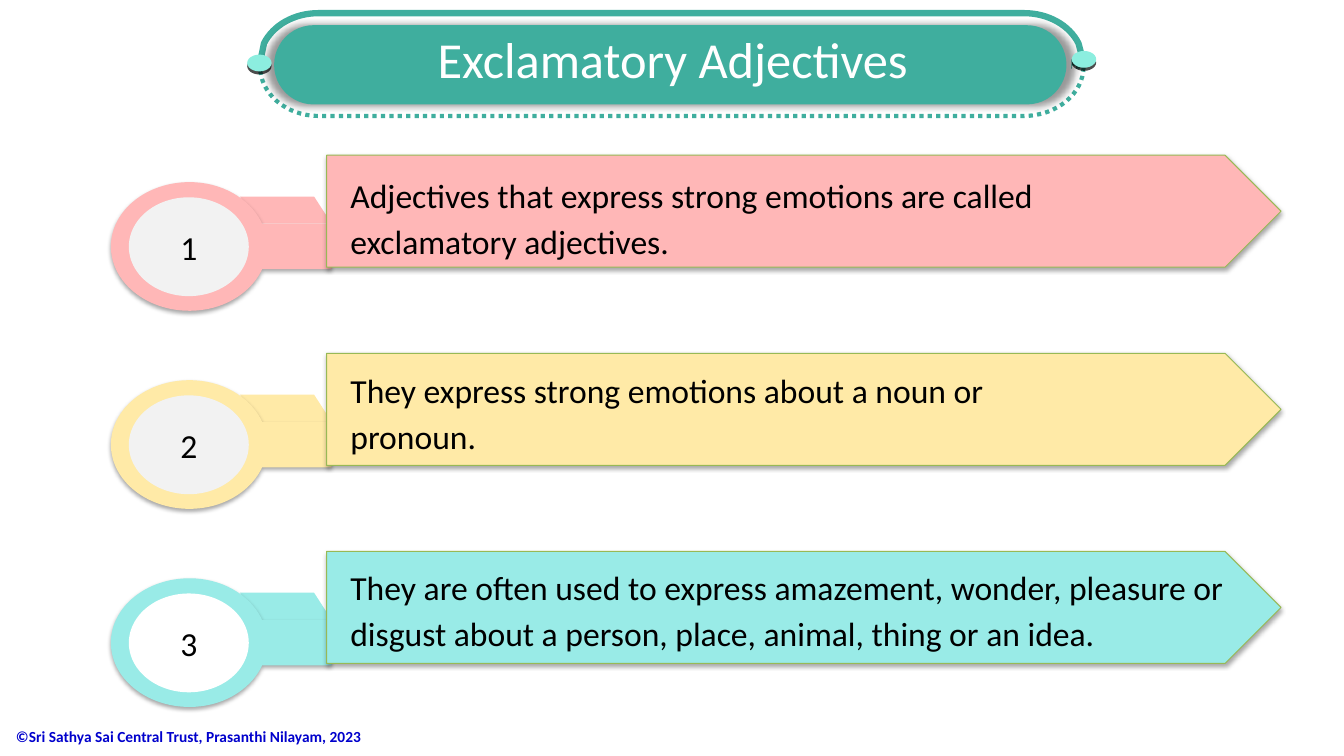
from pptx import Presentation
from pptx.dml.color import RGBColor
from pptx.enum.dml import MSO_LINE_DASH_STYLE as Dash
from pptx.enum.shapes import MSO_SHAPE as Kind
from pptx.enum.text import MSO_ANCHOR as Anchor, PP_ALIGN as Align
from pptx.oxml import parse_xml
from pptx.oxml.ns import nsdecls, qn
from pptx.util import Pt

WHITE = RGBColor(0xFF, 0xFF, 0xFF)
BLACK = RGBColor(0, 0, 0)
GREY = RGBColor(0xF2, 0xF2, 0xF2)
TEAL = RGBColor(0x3F, 0xAE, 0x9E)
MINT = RGBColor(0x8C, 0xEE, 0xDF)
PINK = RGBColor(0xFF, 0xB7, 0xB7)
SAND = RGBColor(0xFF, 0xEA, 0xA7)
AQUA = RGBColor(0x99, 0xEB, 0xE7)
OLIVE = RGBColor(0x98, 0xB9, 0x55)
BLUE = RGBColor(0, 0, 0xCC)

# Shadows: opacity %, blur, distance, angle, scale %
SOFT = (35, 3.1, 1.8, 90, 100)
GLOW = (40, 5, 0, 0, 102)
HARD = (70, 0, 2.2, 90, 100)

# Outlines: a start point, then lines (one point) and curves (three points)
UPPER = [
    [(227.5, 9.4)], [(731.5, 9.4)],
    [(748.8, 9.4), (763.9, 18), (770.4, 31)],
    [(774, 44.6)], [(185.8, 44.6)], [(188.6, 31)],
    [(195.1, 18), (210.2, 9.4), (227.5, 9.4)],
]
LOWER = [
    [(185.8, 47.5)], [(774, 47.5)],
    [(774, 67), (754.6, 82.8), (731.5, 82.8)],
    [(227.5, 82.8)],
    [(204.5, 82.8), (185.8, 67), (185.8, 47.5)],
]
RING = [
    [(135.4, 19.2)],
    [(158.4, 19.2), (177.8, 30.7), (186.5, 47.3)],
    [(187.2, 49)], [(236.9, 49)], [(236.9, 81.4)], [(187.2, 81.4)],
    [(186.5, 83)],
    [(177.8, 99.6), (158.4, 111.1), (135.4, 111.1)],
    [(104.4, 111.1), (79.2, 90.6), (79.2, 65.2)],
    [(79.2, 39.8), (104.4, 19.2), (135.4, 19.2)],
]

TOP, STEP = 110.9, 141.5
# Colour, disc colour, text, text offset and width
ROWS = [
    (PINK, GREY, "Adjectives that express strong emotions are called "
     "exclamatory adjectives.", 6.5, 610.6),
    (SAND, GREY, "They express strong emotions about a noun or pronoun.",
     4.3, 533.5),
    (AQUA, WHITE, "They are often used to express amazement, wonder, "
     "pleasure or disgust about a person, place, animal, thing or an idea.",
     3.5, 652.3),
]


def paint(shape, fill, line=None, width=0.75, dash=None, shade=None):
    shape.fill.solid()
    shape.fill.fore_color.rgb = fill
    if line is None:
        shape.line.fill.background()
    else:
        shape.line.color.rgb = line
        shape.line.width = Pt(width)
        shape.line.dash_style = dash
    shape.shadow.inherit = False
    if shade:
        alpha, blur, dist, angle, scale = shade
        effects = shape._element.spPr.find(qn("a:effectLst"))
        effects.append(parse_xml(
            f'<a:outerShdw {nsdecls("a")} blurRad="{Pt(blur)}" '
            f'dist="{Pt(dist)}" dir="{angle * 60000}" '
            f'sx="{scale * 1000}" sy="{scale * 1000}" algn="ctr" '
            'rotWithShape="0"><a:srgbClr val="000000">'
            f'<a:alpha val="{alpha * 1000}"/></a:srgbClr></a:outerShdw>'))
    return shape


def preset(slide, kind, box, fill, adj=None, **style):
    shape = slide.shapes.add_shape(kind, *map(Pt, box))
    if adj is not None:
        shape.adjustments[0] = adj
    return paint(shape, fill, **style)


def outline(slide, parts, fill, top=0, **style):
    first, *rest = [(Pt(x), Pt(top + y)) for part in parts for x, y in part]
    pen = slide.shapes.build_freeform(*first)
    pen.add_line_segments(rest, close=True)
    shape = pen.convert_to_shape()
    # Join each group of three points into one curve
    steps = iter(list(shape._element.iter(qn("a:lnTo"))))
    for part in parts[1:]:
        head, *tail = [next(steps) for _ in part]
        if tail:
            head.tag = qn("a:cubicBezTo")
        for step in tail:
            head.append(step[0])
            step.getparent().remove(step)
    return paint(shape, fill, **style)


def write(shape, text, size=24, color=BLACK, bold=False, align=Align.LEFT,
          anchor=Anchor.TOP, lead=None):
    frame = shape.text_frame
    frame.word_wrap = True
    frame.vertical_anchor = anchor
    frame.text = text
    para = frame.paragraphs[0]
    para.alignment = align
    para.line_spacing = lead
    font = para.runs[0].font
    font.name, font.size, font.bold = "Calibri", Pt(size), bold
    font.color.rgb = color


def label(slide, box, text, **style):
    write(slide.shapes.add_textbox(*map(Pt, box)), text, **style)


def banner(slide):
    outline(slide, UPPER, WHITE, line=TEAL, width=4.5)
    outline(slide, LOWER, WHITE, line=TEAL, width=3, dash=Dash.ROUND_DOT)
    preset(slide, Kind.ROUNDED_RECTANGLE, (189.4, 15.8, 576, 58.3), WHITE,
           adj=0.5)
    preset(slide, Kind.ROUNDED_RECTANGLE, (195.8, 18, 566, 56.6), TEAL,
           adj=0.5, shade=GLOW)
    # Beads at both ends
    for x, y in ((176.6, 39), (765.6, 36.4)):
        preset(slide, Kind.OVAL, (x, y, 17.4, 12), MINT, shade=HARD)
    # Title, raised above the pill
    title = slide.shapes.title
    title.left, title.top, title.width, title.height = map(
        Pt, (242.6, 16.6, 476, 51))
    write(title, "Exclamatory Adjectives", size=36, color=WHITE,
          align=Align.CENTER)
    slide.shapes._spTree.append(title._element)


def row(slide, num, color, disc, text, drop, width):
    top = TOP + STEP * (num - 1)
    # Folded tab and ring
    fold = preset(slide, Kind.PARALLELOGRAM, (171.4, top + 29.5, 65.5, 19.4),
                  color, adj=0.648)
    fold._element.spPr.xfrm.set("flipH", "1")
    outline(slide, RING, color, top=top, shade=SOFT)
    # Number
    badge = preset(slide, Kind.OVAL, (92, top + 30, 85.7, 70.6), disc)
    write(badge, str(num), align=Align.CENTER, anchor=Anchor.MIDDLE)
    # Arrow and its text
    preset(slide, Kind.PENTAGON, (233.3, top, 681.8, 80), color, adj=0.5,
           line=OLIVE, shade=SOFT)
    label(slide, (243.2, top + drop, width, 72), text, lead=1.14)


def main():
    deck = Presentation()
    deck.slide_width, deck.slide_height = Pt(960), Pt(540)
    slide = deck.slides.add_slide(deck.slide_layouts[5])
    label(slide, (4.3, 511.2, 274, 29),
          "©Sri Sathya Sai Central Trust, Prasanthi Nilayam, 2023",
          size=11, color=BLUE, bold=True, anchor=Anchor.MIDDLE)
    banner(slide)
    for num, data in enumerate(ROWS, 1):
        row(slide, num, *data)
    deck.save("out.pptx")


if __name__ == "__main__":
    main()
